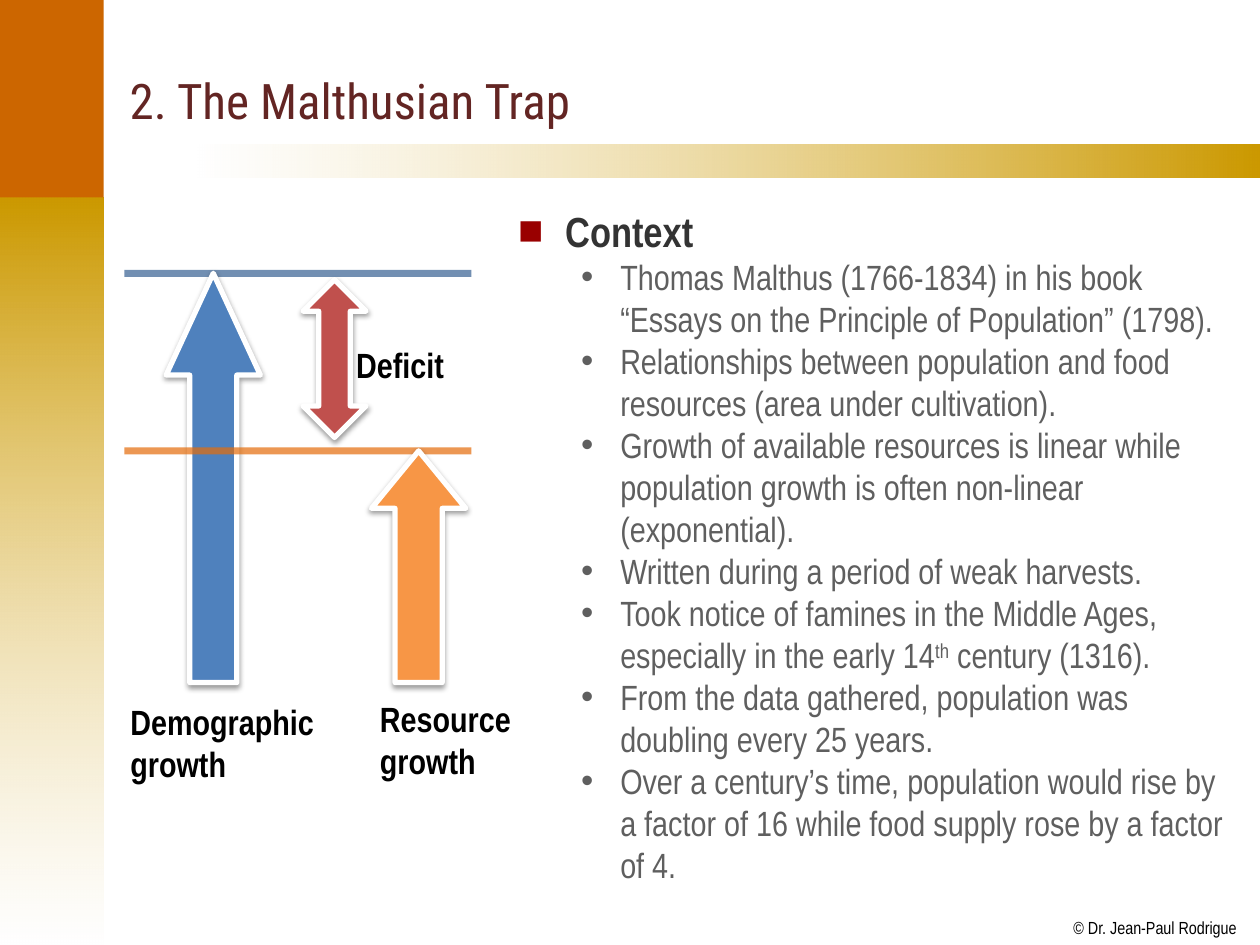
import pptx
import pptx.dml.color
import pptx.enum.shapes
import pptx.enum.text
import pptx.oxml
import pptx.oxml.ns
import pptx.util
from lxml import etree
from pptx.util import Cm

COLOURS = {
    "gold": "CC9900", "rust": "CC6600", "white": "FFFFFF", "black": "000000",
    "title": "632523", "heading": "333333", "body": "5F5F5F", "bullet": "990000",
    "population": "4F81BD", "resource": "F79646", "deficit": "C0504D",
    "population level": "376092", "resource level": "E46C0A",
}
FONT = "Arial Narrow"
SHAPES = pptx.enum.shapes.MSO_SHAPE
POINTS = [
    ["Thomas Malthus (1766-1834) in his book “Essays on the Principle of Population” (1798)."],
    ["Relationships between population and food resources (area under cultivation)."],
    ["Growth of available resources is linear while population growth is often "
     "non-linear (exponential)."],
    ["Written during a period of weak harvests."],
    ["Took notice of famines in the Middle Ages, especially in the early 14", "th",
     " century (1316)."],
    ["From the data gathered, population was doubling every 25 years."],
    ["Over a century’s time, population would rise by a factor of 16 while food supply "
     "rose by a factor of 4."],
]


def colour(name):
    """Return the named colour."""
    return pptx.dml.color.RGBColor.from_string(COLOURS[name])


def add_child(parent, tag, **attributes):
    """Append a drawing element to a parent element."""
    return etree.SubElement(parent, pptx.oxml.ns.qn(tag), attributes)


def set_alpha(element, percent):
    """Make the RGB colour within an element partly transparent."""
    rgb = element.find(".//" + pptx.oxml.ns.qn("a:srgbClr"))
    add_child(rgb, "a:alpha", val=str(percent * 1000))


def style_font(para, size, name, bold=False, face=FONT):
    """Set the font of a whole paragraph."""
    font = para.font
    font.name, font.size, font.bold = face, pptx.util.Pt(size), bold
    font.color.rgb = colour(name)


def place(shape, left, top, width, height):
    """Move and size a shape, in centimetres."""
    shape.left, shape.top = Cm(left), Cm(top)
    shape.width, shape.height = Cm(width), Cm(height)


def add_block(page, kind, left, top, width, height):
    """Add a preset shape with no outline or shadow."""
    block = page.shapes.add_shape(kind, Cm(left), Cm(top), Cm(width), Cm(height))
    block.shadow.inherit = False
    block.line.fill.background()
    return block


def add_gradient(page, box, angle, stops):
    """Add a rectangle fading between two (colour, opacity) stops."""
    block = add_block(page, SHAPES.RECTANGLE, *box)
    block.fill.gradient()
    block.fill.gradient_angle = angle
    for index, (name, opacity) in enumerate(stops):
        stop = block.fill.gradient_stops[index]
        stop.position = index
        stop.color.rgb = colour(name)
        if opacity < 100:
            set_alpha(block._element.spPr.findall(".//" + pptx.oxml.ns.qn("a:gs"))[index], opacity)


def add_label(page, left, top, width, height, lines, size=20, bold=True, inset=None):
    """Add a text box with one paragraph for each line."""
    box = page.shapes.add_textbox(Cm(left), Cm(top), Cm(width), Cm(height))
    frame = box.text_frame
    frame.word_wrap = False
    if inset is not None:
        frame.margin_left = frame.margin_right = Cm(inset)
        frame.margin_top = frame.margin_bottom = Cm(inset)
    frame.text = "\n".join(lines)
    for para in frame.paragraphs:
        style_font(para, size, "black", bold)


def add_frame(page, width, height):
    """Draw the side band, the title bar and the copyright line."""
    band, split, bar = 2.09, 3.98, 3.98
    add_gradient(page, (0, split, band, height - split), 270, [("gold", 100), ("white", 51)])
    add_gradient(page, (bar, 2.92, width - bar, 0.67), 0, [("white", 50), ("gold", 100)])
    corner = add_block(page, SHAPES.RECTANGLE, 0, 0, band, split)
    corner.fill.solid()
    corner.fill.fore_color.rgb = colour("rust")
    add_label(page, width - 3.76, height - 0.56, 3.3, 0.43,
              ["© Dr. Jean-Paul Rodrigue"], 10, False, 0)


def add_title(page, left, top, width, height):
    """Fill and place the title."""
    title = page.shapes.title
    place(title, left, top, width, height)
    frame = title.text_frame
    frame.text = "2. The Malthusian Trap"
    frame.vertical_anchor = pptx.enum.text.MSO_ANCHOR.MIDDLE
    frame.auto_size = pptx.enum.text.MSO_AUTO_SIZE.NONE
    para = frame.paragraphs[0]
    para.alignment = pptx.enum.text.PP_ALIGN.LEFT
    style_font(para, 28, "title", face="Roboto Condensed")


def set_bullet(para, mark, name, margin, indent):
    """Give a paragraph a coloured bullet and a hanging indent, in centimetres."""
    properties = para._p.get_or_add_pPr()
    properties.set("marL", str(Cm(margin)))
    properties.set("indent", str(-Cm(indent)))
    para.space_before = pptx.util.Pt(0)
    add_child(add_child(properties, "a:buClr"), "a:srgbClr", val=COLOURS[name])
    add_child(properties, "a:buFont", typeface="Arial")
    add_child(properties, "a:buChar", char=mark)


def add_list(page, left, top, width, height):
    """Fill and place the heading and its points."""
    body = page.placeholders[1]
    place(body, left, top, width, height)
    frame = body.text_frame
    frame.auto_size = pptx.enum.text.MSO_AUTO_SIZE.NONE
    heading = frame.paragraphs[0]
    heading.text = "Context"
    set_bullet(heading, "■", "bullet", 0.95, 0.95)
    style_font(heading, 24, "heading", True)
    for parts in POINTS:
        para = frame.add_paragraph()
        para.level = 1
        set_bullet(para, "•", "body", 2.06, 0.79)
        style_font(para, 20, "body")
        for part in parts:
            span = para.add_run()
            span.text = part
            if part == "th":
                span.font._element.set("baseline", "30000")


def add_level(page, left, top, width, name):
    """Draw a horizontal level line."""
    line = page.shapes.add_connector(pptx.enum.shapes.MSO_CONNECTOR.STRAIGHT,
                                     Cm(left + width), Cm(top), Cm(left), Cm(top))
    line.line.width = pptx.util.Pt(4)
    line.line.color.rgb = colour(name)
    properties = line._element.spPr
    set_alpha(properties, 70)
    add_child(properties, "a:effectLst")


def add_arrow(page, kind, left, top, width, height, head, name):
    """Draw a block arrow with a white outline and a soft shadow."""
    arrow = add_block(page, kind, left, top, width, height)
    arrow.adjustments[0], arrow.adjustments[1] = 0.5, head
    arrow.fill.solid()
    arrow.fill.fore_color.rgb = colour(name)
    arrow.line.color.rgb = colour("white")
    arrow.line.width = pptx.util.Pt(3)
    effects = arrow._element.spPr.find(pptx.oxml.ns.qn("a:effectLst"))
    shadow = add_child(effects, "a:outerShdw", blurRad=str(pptx.util.Pt(3.1)),
                       dist=str(pptx.util.Pt(1.6)), dir="5400000", rotWithShape="0")
    add_child(shadow, "a:srgbClr", val=COLOURS["black"])
    set_alpha(shadow, 38)


def add_diagram(page, left, top, width, height):
    """Draw population outgrowing resources, with the deficit between."""
    gap, thick = 3.58, 1.9
    add_level(page, left, top, width, "population level")
    add_arrow(page, SHAPES.UP_ARROW, left + 0.84, top, thick, height, 1.08, "population")
    add_level(page, left, top + gap, width, "resource level")
    add_arrow(page, SHAPES.UP_DOWN_ARROW, left + 3.6, top + 0.13, 1.27, 3.18, 0.5, "deficit")
    add_arrow(page, SHAPES.UP_ARROW, left + 4.98, top + gap, thick, height - gap, 0.61, "resource")
    add_label(page, left - 0.13, top + height + 0.23, 4.24, 1.96, ["Demographic", "growth"])
    add_label(page, left + 4.9, top + height + 0.18, 3.18, 1.96, ["Resource", "growth"])
    add_label(page, left + 4.42, top + 1.3, 2.29, 1.12, ["Deficit"])


def main():
    """Build and save the deck."""
    deck = pptx.Presentation()
    deck.slide_width, deck.slide_height = Cm(25.4), Cm(19.05)
    page = deck.slides.add_slide(deck.slide_layouts[1])
    add_frame(page, 25.4, 19.05)
    add_title(page, 2.36, 0.43, 22.6, 3.18)
    add_list(page, 10.19, 4.01, 14.8, 14.27)
    add_diagram(page, 2.51, 5.51, 6.99, 8.25)
    deck.save("out.pptx")


if __name__ == "__main__":
    main()
